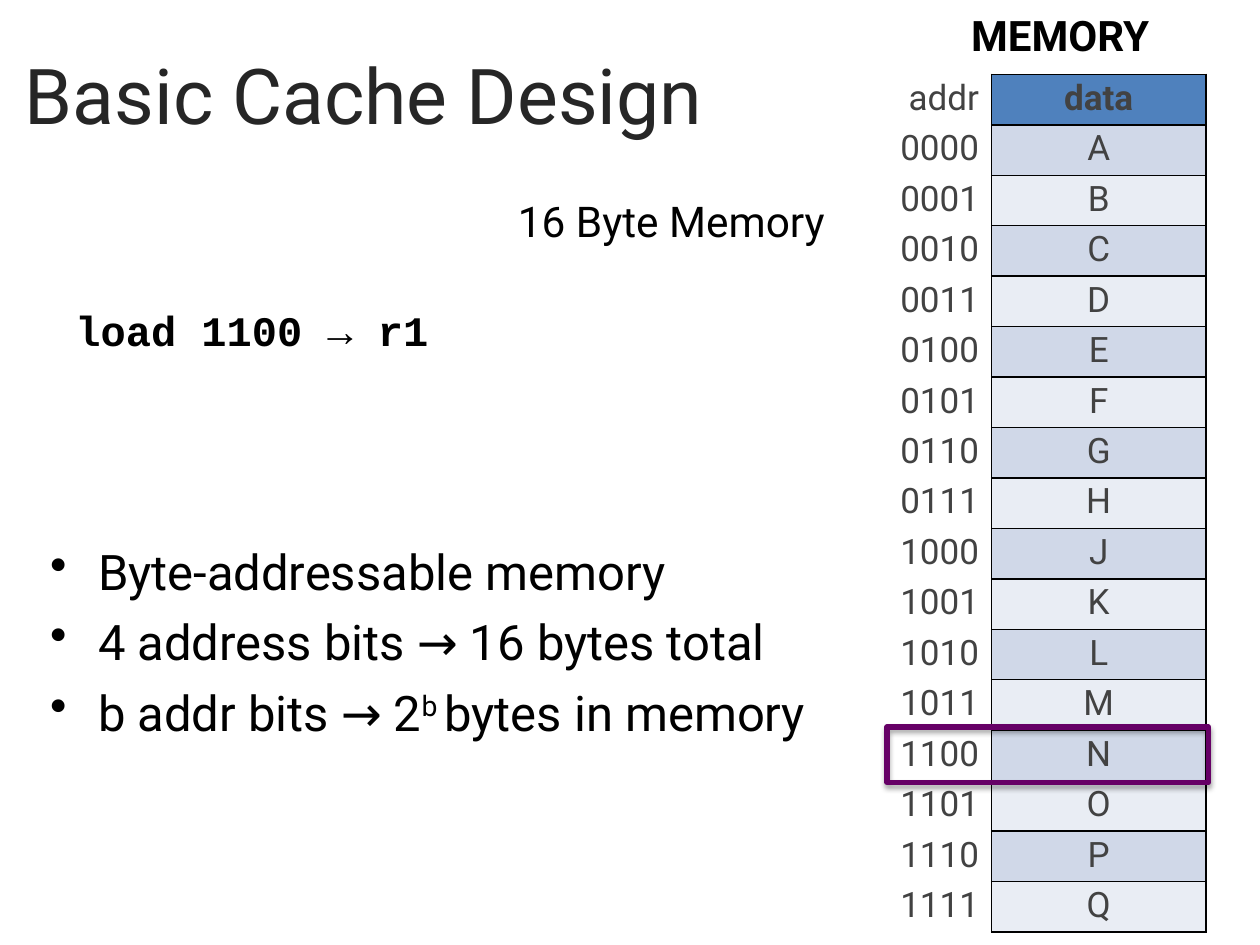
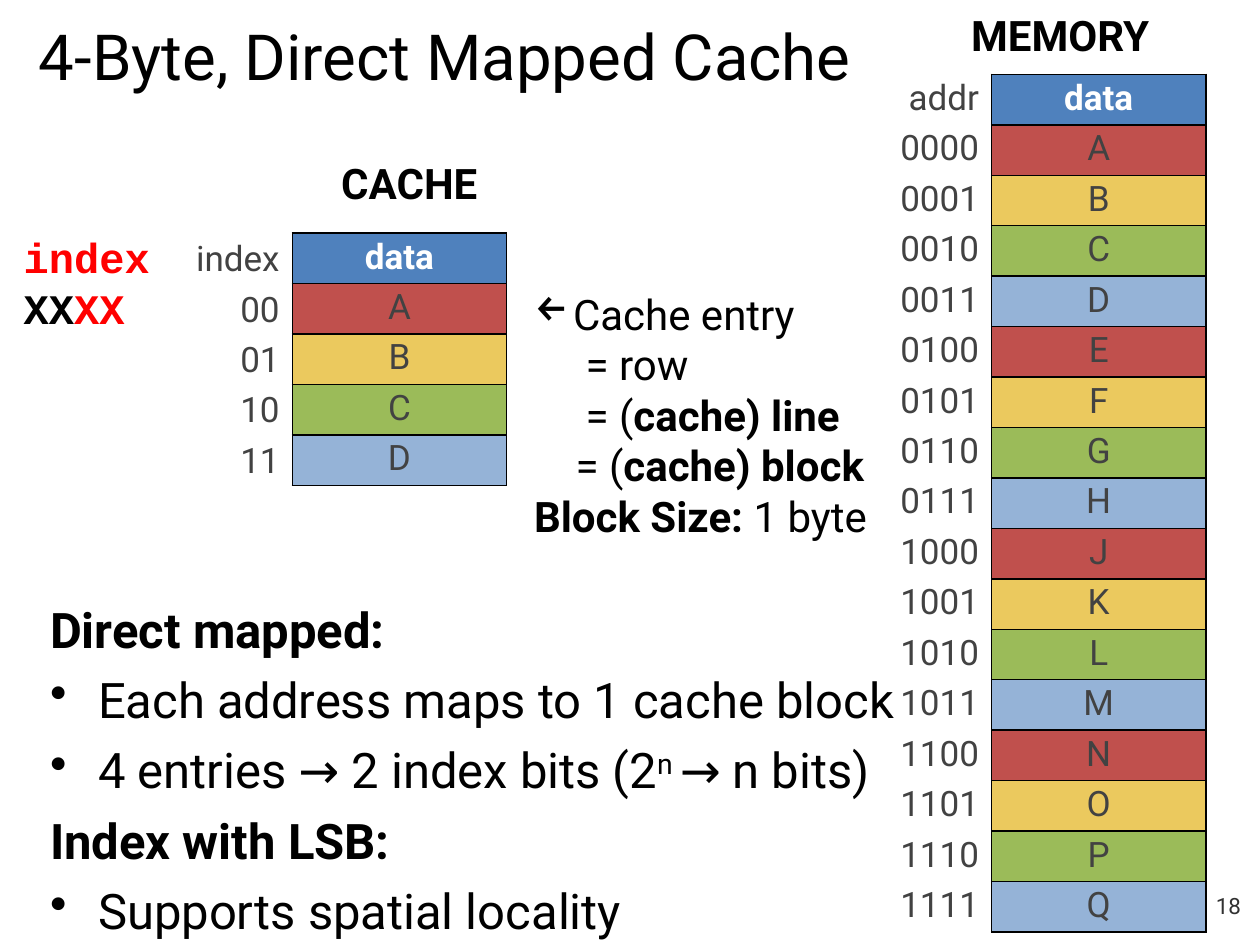
import pptx
import pptx.dml.color
import pptx.enum.shapes
import pptx.enum.text
import pptx.oxml
import pptx.oxml.ns
import pptx.util

ALIGN = pptx.enum.text.PP_ALIGN
ANCHOR = pptx.enum.text.MSO_ANCHOR
GRID_COLUMNS, GRID_ROWS = 100, 75
CELL_ROW = 4
MEMORY_LEFT, MEMORY_TOP = 70.2, 5.9
ADDRESS_WIDTH, DATA_WIDTH = 8.5, 17

BLACK, WHITE, GREY, RED, PURPLE = "000000", "FFFFFF", "424242", "FF0000", "660066"
HEADER_BLUE = "4F81BD"
BAND_FILLS = ["D0D8E8", "E9EDF4"]
INDEX_FILLS = ["C0504D", "EBC95E", "9BBB59", "95B3D7"]
MEMORY_BYTES = "ABCDEFGHJKLMNOPQ"


def color(hex_string):
    return pptx.dml.color.RGBColor.from_string(hex_string)


def add_xml(parent, tag, **attributes):
    child = pptx.oxml.parse_xml(f"<a:{tag} {pptx.oxml.ns.nsdecls('a')}/>")
    for name, value in attributes.items():
        child.set(name, str(value))
    parent.append(child)
    return child


class Deck:
    """Holds the presentation, its text style and the current slide."""

    font, mono = "Roboto", "Courier New"
    body_size, list_size, cell_size = 24, 28, 20

    def __init__(self):
        self.presentation = pptx.Presentation()
        self.presentation.slide_width = pptx.util.Inches(10)
        self.presentation.slide_height = pptx.util.Inches(7.5)
        self.slide = None

    def new_slide(self):
        self.slide = self.presentation.slides.add_slide(self.presentation.slide_layouts[6])

    def place(self, left, top, width, height):
        """Turn grid columns and rows into lengths."""
        column = self.presentation.slide_width / GRID_COLUMNS
        row = self.presentation.slide_height / GRID_ROWS
        return [round(n * unit) for n, unit in zip((left, top, width, height), (column, row) * 2)]

    def run(self, paragraph, text, size=body_size, ink=BLACK, bold=False, font=font,
            superscript=False, small_caps=False):
        run = paragraph.add_run()
        run.text = text
        run.font.name, run.font.size, run.font.bold = font, pptx.util.Pt(size), bold
        run.font.color.rgb = color(ink)
        if superscript:
            run._r.get_or_add_rPr().set("baseline", "30000")
        if small_caps:
            run._r.get_or_add_rPr().set("cap", "small")

    def text_box(self, place, anchor=ANCHOR.TOP, wrap=True):
        frame = self.slide.shapes.add_textbox(*self.place(*place)).text_frame
        frame.word_wrap, frame.vertical_anchor = wrap, anchor
        return frame

    def paragraph(self, frame, *runs, align=ALIGN.LEFT, spacing=None, before=0,
                  bullet=None, indent=0, tab=None, **style):
        """Add one paragraph; each run is a text, or a text with its own style."""
        first = frame.paragraphs[0]
        paragraph = frame.add_paragraph() if first.runs else first
        paragraph.alignment, paragraph.line_spacing = align, spacing
        paragraph.space_before = pptx.util.Pt(before)
        properties = paragraph._p.get_or_add_pPr()
        margin = pptx.util.Inches(indent)
        properties.set("marL", str(margin))
        properties.set("indent", str(-margin if bullet else 0))
        if bullet:
            add_xml(properties, "buChar", char=bullet)
        if tab:
            add_xml(add_xml(properties, "tabLst"), "tab", pos=pptx.util.Inches(tab), algn="l")
        for item in runs:
            text, own = (item, {}) if isinstance(item, str) else item
            self.run(paragraph, text, **{**style, **own})

    def title(self, place, text, size, ink=BLACK, spacing=None):
        self.paragraph(self.text_box(place, ANCHOR.MIDDLE), text, size=size, ink=ink,
                       align=ALIGN.CENTER, spacing=spacing)

    def heading(self, place, text):
        self.paragraph(self.text_box(place, wrap=False), text, bold=True)

    def list_line(self, frame, *runs):
        self.paragraph(frame, *runs, size=self.list_size, before=6.5, bullet="•", indent=0.38)

    def list_heading(self, frame, text):
        self.paragraph(frame, text, size=self.list_size, before=6.5, bold=True)

    def table(self, left, top, widths, row_count):
        place = self.place(left, top, sum(widths), row_count * CELL_ROW)
        table = self.slide.shapes.add_table(row_count, len(widths), *place).table
        table.first_row = table.horz_banding = False
        for column, width in zip(table.columns, widths):
            column.width = self.place(width, 0, 0, 0)[0]
        return table

    def cell(self, cell, text, fill=None, borders=(None,) * 4, align=ALIGN.CENTER,
             ink=GREY, bold=False):
        """Fill one cell; borders are left, right, top and bottom colours."""
        properties = cell._tc.get_or_add_tcPr()
        for side, border in zip("LRTB", borders):
            line = add_xml(properties, "ln" + side, w=pptx.util.Pt(1))
            if border:
                add_xml(add_xml(line, "solidFill"), "srgbClr", val=border)
            else:
                add_xml(line, "noFill")
        if fill:
            cell.fill.solid()
            cell.fill.fore_color.rgb = color(fill)
        else:
            cell.fill.background()
        self.paragraph(cell.text_frame, text, align=align, spacing=0.9,
                       size=self.cell_size, ink=ink, bold=bold)

    def data_column(self, table, column, values, fills, header_ink):
        black = (BLACK,) * 4
        self.cell(table.cell(0, column), "data", HEADER_BLUE, black, ink=header_ink, bold=True)
        for row, value in enumerate(values):
            self.cell(table.cell(row + 1, column), value, fills[row % len(fills)], black)

    def label_column(self, table, labels, **style):
        for row, label in enumerate(labels):
            self.cell(table.cell(row, 0), label, align=ALIGN.RIGHT, **style)

    def memory(self, fills, header_ink):
        self.heading((76.1, 0.3, 17, 5), "MEMORY")
        addresses = [f"{n:04b}" for n in range(len(MEMORY_BYTES))]
        table = self.table(MEMORY_LEFT, MEMORY_TOP, [ADDRESS_WIDTH, DATA_WIDTH], len(addresses) + 1)
        self.label_column(table, ["addr"] + addresses, fill=WHITE,
                          borders=(WHITE, BLACK, WHITE, WHITE))
        self.data_column(table, 1, MEMORY_BYTES, fills, header_ink)

    def highlight(self, address):
        """Frame the memory row of an address."""
        top = MEMORY_TOP + (address + 1) * CELL_ROW - 0.2
        place = self.place(MEMORY_LEFT + 0.2, top, ADDRESS_WIDTH + DATA_WIDTH, CELL_ROW + 0.4)
        shape = self.slide.shapes.add_shape(pptx.enum.shapes.MSO_SHAPE.RECTANGLE, *place)
        shape.fill.background()
        shape.line.color.rgb, shape.line.width = color(PURPLE), pptx.util.Pt(3)
        shape.shadow.inherit = False
        effects = shape._element.spPr.find(pptx.oxml.ns.qn("a:effectLst"))
        shadow = add_xml(effects, "outerShdw", blurRad=pptx.util.Pt(3.1),
                         dist=pptx.util.Pt(1.8), dir=90 * 60000, rotWithShape=0)
        add_xml(add_xml(shadow, "srgbClr", val=BLACK), "alpha", val=35000)


def basic_design_slide(deck):
    deck.new_slide()
    deck.memory(BAND_FILLS, GREY)
    deck.title((22, 15.6, 62.6, 4.5), "16 Byte Memory", 24.2, spacing=0.8)
    facts = deck.text_box((3, 42.5, 90, 24.5))
    deck.list_line(facts, "Byte-addressable memory")
    deck.list_line(facts, "4 address bits → 16 bytes total")
    deck.list_line(facts, "b addr bits → 2", ("b ", {"superscript": True}), "bytes in memory")
    instruction = deck.text_box((5, 23.7, 38.8, 5))
    deck.paragraph(instruction, "load\t1100 → r1", font=deck.mono, bold=True, tab=1.4)
    deck.highlight(0b1100)
    deck.title((-1.3, -0.6, 60.4, 16.1), "Basic Cache Design", 44, ink="262626")


def direct_mapped_slide(deck):
    deck.new_slide()
    number = deck.text_box((95, 68.4, 5, 6.6), ANCHOR.MIDDLE, wrap=False)
    deck.paragraph(number, "18", align=ALIGN.CENTER, size=16, ink="323232", small_caps=True)
    deck.title((0.7, 0.4, 69.3, 8.7), "4-Byte, Direct Mapped Cache", 36.3, spacing=0.9)
    deck.memory(INDEX_FILLS, WHITE)

    deck.heading((26.1, 12, 14, 5), "CACHE")
    cached = MEMORY_BYTES[:len(INDEX_FILLS)]
    cache = deck.table(23.2, 18.5, [DATA_WIDTH], len(cached) + 1)
    deck.data_column(cache, 0, cached, INDEX_FILLS, WHITE)
    indexes = deck.table(12, 18.7, [11.2], len(cached) + 1)
    deck.label_column(indexes, ["index"] + [f"{n:02b}" for n in range(len(cached))])

    facts = deck.text_box((3, 47.1, 90, 25.7))
    deck.list_heading(facts, "Direct mapped:")
    deck.list_line(facts, "Each address maps to 1 cache block")
    deck.list_line(facts, "4 entries → 2 index bits (2", ("n ", {"superscript": True}), "→ n bits)")
    deck.list_heading(facts, "Index with LSB:")
    deck.list_line(facts, "Supports spatial locality")

    address_bits = deck.text_box((0.9, 17.9, 22.6, 9.1))
    for runs in (["index"], [("XX", {"ink": BLACK}), "XX"]):
        deck.paragraph(address_bits, *runs, font=deck.mono, bold=True, ink=RED)

    bold = {"bold": True}
    entry = deck.text_box((41.4, 22.4, 50, 21.2))
    deck.paragraph(entry, "Cache entry", bullet="←", indent=0.31)
    deck.paragraph(entry, "= row", indent=0.41)
    deck.paragraph(entry, "= (", ("cache) line", bold), indent=0.41)
    deck.paragraph(entry, "= (", ("cache) block", bold), indent=0.33)
    deck.paragraph(entry, ("Block Size: ", bold), "1 byte")


def main():
    deck = Deck()
    basic_design_slide(deck)
    direct_mapped_slide(deck)
    deck.presentation.save("out.pptx")


if __name__ == "__main__":
    main()
